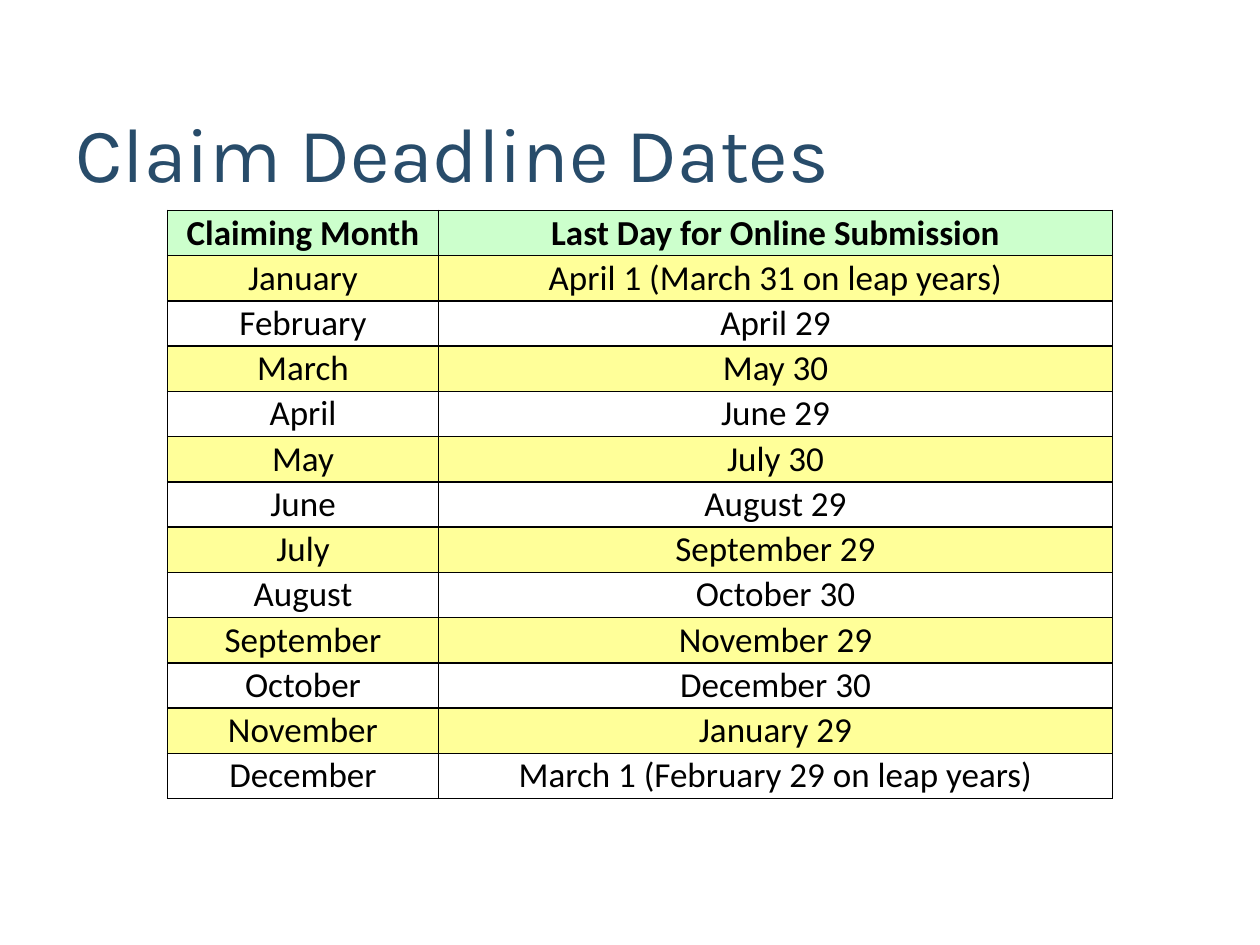
"""Build a slide with a table of claim deadline dates."""
from lxml import etree
from pptx import Presentation
from pptx.dml.color import RGBColor
from pptx.enum.text import MSO_ANCHOR, PP_ALIGN
from pptx.oxml.ns import qn
from pptx.util import Inches, Pt

CENTER = PP_ALIGN.CENTER
LEFT = PP_ALIGN.LEFT
MIDDLE = MSO_ANCHOR.MIDDLE
TITLE_ONLY = 5
DEADLINES = [
    ("Claiming Month", "Last Day for Online Submission"),
    ("January", "April 1 (March 31 on leap years)"),
    ("February", "April 29"),
    ("March", "May 30"),
    ("April", "June 29"),
    ("May", "July 30"),
    ("June", "August 29"),
    ("July", "September 29"),
    ("August", "October 30"),
    ("September", "November 29"),
    ("October", "December 30"),
    ("November", "January 29"),
    ("December", "March 1 (February 29 on leap years)"),
]
COLUMN_WIDTHS = [2.15, 5.35]
TABLE_HEIGHT = 4.67
CELL_FORMAT = {
    "margin_left": Inches(0.07),
    "margin_right": Inches(0.07),
    "margin_top": 0,
    "margin_bottom": 0,
    "vertical_anchor": MIDDLE,
}


def format_text(paragraph, alignment, color, **font_values):
    paragraph.alignment = alignment
    paragraph.font.color.rgb = RGBColor.from_string(color)
    for name, value in font_values.items():
        setattr(paragraph.font, name, value)


def add_borders(cell, color, width):
    properties = cell._tc.get_or_add_tcPr()
    for position, side in enumerate(("a:lnL", "a:lnR", "a:lnT", "a:lnB")):
        line = etree.Element(qn(side), w=str(width))
        fill = etree.SubElement(line, qn("a:solidFill"))
        etree.SubElement(fill, qn("a:srgbClr"), val=color)
        properties.insert(position, line)


presentation = Presentation()
presentation.slide_width = Inches(10)
presentation.slide_height = Inches(7.5)
slide = presentation.slides.add_slide(presentation.slide_layouts[TITLE_ONLY])

title = slide.shapes.title
title.left, title.top = Inches(0.5), Inches(0.75)
title.width, title.height = Inches(8.83), Inches(1)
title.text_frame.text = "Claim Deadline Dates"
title.text_frame.vertical_anchor = MIDDLE
title_paragraph = title.text_frame.paragraphs[0]
title_paragraph.line_spacing = 0.9
format_text(title_paragraph, LEFT, "284C6A", name="Karla", size=Pt(44))

table = slide.shapes.add_table(
    len(DEADLINES), len(COLUMN_WIDTHS), Inches(1.33), Inches(1.67),
    Inches(sum(COLUMN_WIDTHS)), Inches(TABLE_HEIGHT),
).table
table.horz_banding = False
for column, width in zip(table.columns, COLUMN_WIDTHS):
    column.width = Inches(width)

for row_index, deadline in enumerate(DEADLINES):
    is_header = row_index == 0
    fill_color = "CCFFCC" if is_header else "FFFF99" if row_index % 2 else "FFFFFF"
    table.rows[row_index].height = Inches(TABLE_HEIGHT / len(DEADLINES))
    for column_index, text in enumerate(deadline):
        cell = table.cell(row_index, column_index)
        cell.text = text
        for name, value in CELL_FORMAT.items():
            setattr(cell, name, value)
        cell.fill.solid()
        cell.fill.fore_color.rgb = RGBColor.from_string(fill_color)
        add_borders(cell, "000000", Pt(1))
        format_text(cell.text_frame.paragraphs[0], CENTER, "000000",
                    name="Calibri", size=Pt(20), bold=is_header)

presentation.save("out.pptx")
